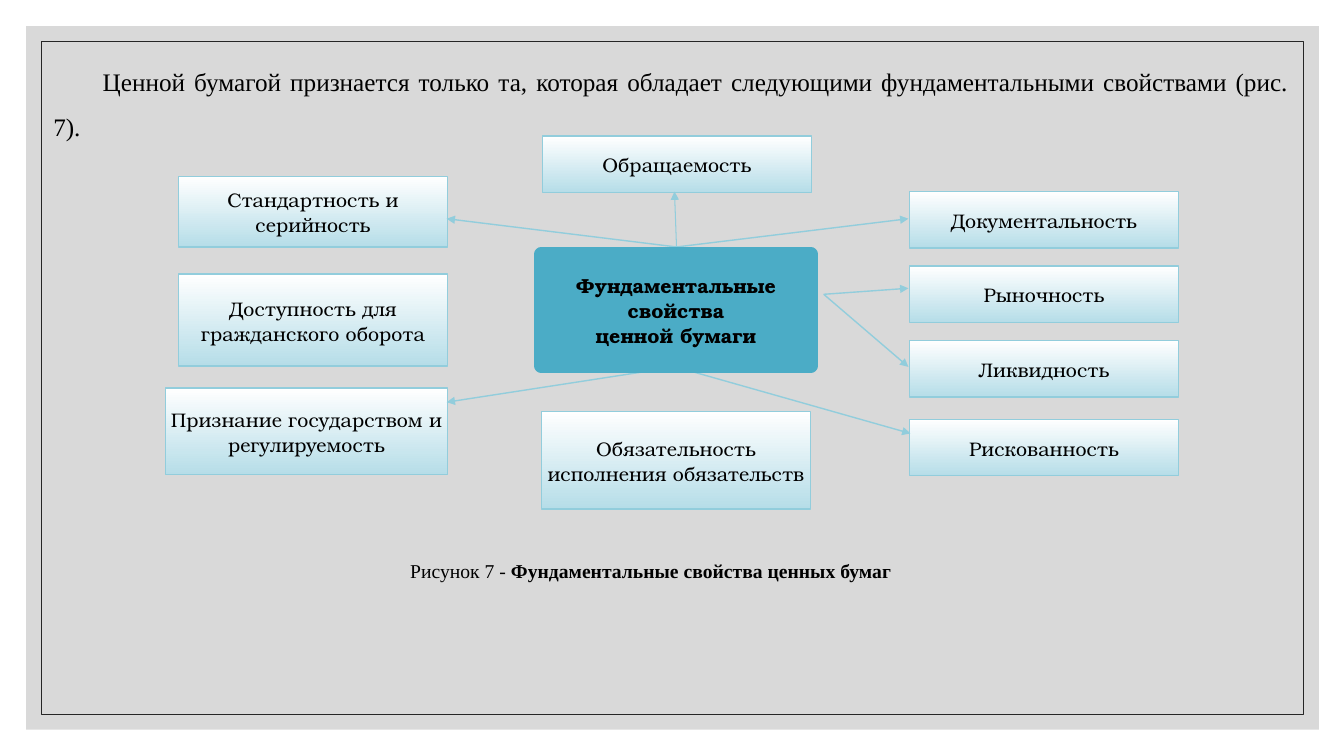
from lxml import etree
from pptx import Presentation
from pptx.dml.color import RGBColor
from pptx.enum.shapes import MSO_CONNECTOR, MSO_SHAPE
from pptx.enum.text import MSO_ANCHOR, PP_ALIGN
from pptx.oxml.ns import qn
from pptx.util import Inches, Pt

RECT = MSO_SHAPE.RECTANGLE
LINE = MSO_CONNECTOR.STRAIGHT
MIDDLE = MSO_ANCHOR.MIDDLE
CENTER = PP_ALIGN.CENTER
JUSTIFY = PP_ALIGN.JUSTIFY

BLACK = RGBColor(0x00, 0x00, 0x00)
WHITE = RGBColor(0xFF, 0xFF, 0xFF)
GREY = RGBColor(0xD9, 0xD9, 0xD9)
DARK = RGBColor(0x26, 0x26, 0x26)
PALE = RGBColor(0xB6, 0xDD, 0xE8)
SKY = RGBColor(0x92, 0xCD, 0xDC)
TEAL = RGBColor(0x4B, 0xAC, 0xC6)

SERIF = {"name": "Times New Roman", "color": BLACK}
LABEL = {"name": "TeX Gyre Bonum", "size": Pt(14), "color": BLACK}
TIGHT = dict.fromkeys(("margin_left", "margin_top", "margin_right", "margin_bottom"), 0)

WIDE = 2.67
LOW = 0.56
LEFT, MID, RIGHT = 0.13, 3.73, 7.38
CARDS = [
    (MID + 0.01, 0, WIDE, LOW, "Обращаемость"),
    (LEFT, 0.4, WIDE, 0.7, "Стандартность и серийность"),
    (LEFT, 1.37, WIDE, 0.91, "Доступность для гражданского оборота"),
    (0, 2.5, 2.8, 0.86, "Признание государством и регулируемость"),
    (MID, 2.73, WIDE, 0.97, "Обязательность исполнения обязательств"),
] + [
    (RIGHT, top, WIDE, LOW, text)
    for top, text in (
        (0.55, "Документальность"),
        (1.29, "Рыночность"),
        (2.03, "Ликвидность"),
        (2.81, "Рискованность"),
    )
]
TOP, SIDE, BASE = (5.07, 1.1), (6.53, 1.57), (5.06, 2.29)
ARROWS = [
    (TOP, (2.79, 0.82), 1),
    (TOP, (7.37, 0.82), 1),
    (TOP, (5.05, 0.55), 0.75),
    (SIDE, (7.37, 1.51), 1),
    (SIDE, (7.37, 2.29), 1),
    (BASE, (2.79, 2.64), 1),
    (BASE, (7.39, 2.95), 1),
]


def put(item, form):
    for key, value in form.items():
        setattr(item, key, value)


def style(font, form):
    put(font, {key: value for key, value in form.items() if key != "color"})
    font.color.rgb = form["color"]


def write(para, text, form):
    run = para.add_run()
    run.text = text
    style(run.font, form)


def block(slide, box, edge, weight, fill=None):
    shape = slide.shapes.add_shape(RECT, *map(Inches, box))
    shape.shadow.inherit = False
    if fill is None:
        shape.fill.background()
    else:
        shape.fill.solid()
        shape.fill.fore_color.rgb = fill
    if edge is None:
        shape.line.fill.background()
    else:
        shape.line.color.rgb = edge
        shape.line.width = Pt(weight)
    return shape


def label(shape, lines, form, after):
    frame = shape.text_frame
    put(frame, TIGHT | {"word_wrap": True, "vertical_anchor": MIDDLE})
    for num, text in enumerate(lines):
        para = frame.add_paragraph() if num else frame.paragraphs[0]
        put(para, {"alignment": CENTER, "line_spacing": 1.07, "space_after": Pt(after)})
        write(para, text, form)


def arrow(slide, start, end, weight):
    line = slide.shapes.add_connector(LINE, *map(Inches, start + end))
    line.line.color.rgb = SKY
    line.line.width = Pt(weight)
    etree.SubElement(line.line._get_or_add_ln(), qn("a:tailEnd"), type="triangle")
    etree.SubElement(line._element.spPr, qn("a:effectLst"))


def border(slide, box):
    left, top, width, height = box
    gap = 0.15
    block(slide, box, None, 0, GREY)
    inner = (left + gap, top + gap, width - 2 * gap, height - 2 * gap)
    block(slide, inner, DARK, 0.5)


def intro(slide, box):
    frame = slide.shapes.add_textbox(*map(Inches, box)).text_frame
    frame.word_wrap = True
    para = frame.paragraphs[0]
    put(para, {"alignment": JUSTIFY, "line_spacing": 1.5})
    para._p.get_or_add_pPr().set("indent", str(Inches(0.49)))
    text = ("Ценной бумагой признается только та, которая обладает следующими "
            "фундаментальными свойствами (рис. 7).")
    write(para, text, SERIF | {"size": Pt(18)})


def chart(slide, left, top):
    for x, y, width, height, text in CARDS:
        card = block(slide, (left + x, top + y, width, height), SKY, 1, PALE)
        card.fill.gradient()
        card.fill.gradient_angle = 270
        for stop, tint in zip(card.fill.gradient_stops, (WHITE, PALE)):
            stop.color.rgb = tint
        label(card, [text], LABEL, 0 if y == 0.4 else 8)
    for start, end, weight in ARROWS:
        first, last = ((left + x, top + y) for x, y in (start, end))
        arrow(slide, first, last, weight)
    core = block(slide, (left + MID, top + 1.17, WIDE, 1.11), TEAL, 10, TEAL)
    label(core, ["Фундаментальные свойства", "ценной бумаги"], LABEL | {"bold": True}, 0)


def caption(slide, box):
    frame = slide.shapes.add_textbox(*map(Inches, box)).text_frame
    frame.word_wrap = False
    para = frame.paragraphs[0]
    form = SERIF | {"size": Pt(14)}
    write(para, "Рисунок 7 - ", form)
    write(para, "Фундаментальные свойства ценных бумаг", form | {"bold": True})


def main():
    deck = Presentation()
    put(deck, {"slide_width": Inches(13.33), "slide_height": Inches(7.5)})
    slide = deck.slides.add_slide(deck.slide_layouts[6])
    border(slide, (0.26, 0.26, 12.82, 6.98))
    intro(slide, (0.43, 0.46, 12.45, 0.51))
    chart(slide, 1.64, 1.35)
    caption(slide, (3.97, 5.5, 5.06, 0.34))
    deck.save("out.pptx")


if __name__ == "__main__":
    main()
